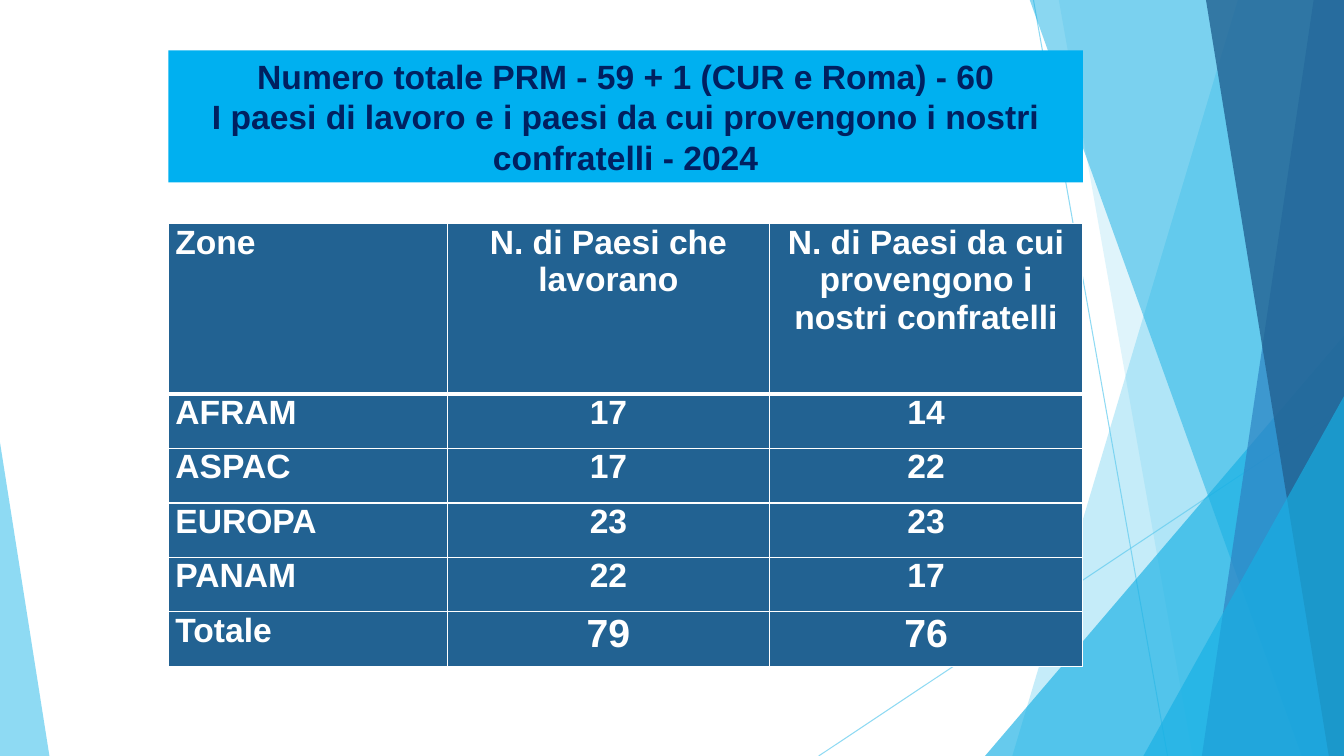
from lxml import etree
from pptx import Presentation, util as u
from pptx.dml.color import RGBColor
from pptx.enum import shapes, text
from pptx.oxml.ns import qn

PX = 9144  # 100 px to the inch
WIDE, HIGH = 1333, 750
SKY, CYAN, BLUE, NAVY = "5FCBEF", "17B0E4", "2E83C3", "226292"
WHITE = "FFFFFF"
MID, LEFT = text.PP_ALIGN.CENTER, text.PP_ALIGN.LEFT


def emu(*px):
    return [u.Emu(round(n * PX)) for n in px]


def rgb(code):
    return RGBColor.from_string(code)


class Deck:
    def __init__(self):
        self.prs = Presentation()
        self.prs.slide_width, self.prs.slide_height = emu(WIDE, HIGH)
        self.slide = self.prs.slides.add_slide(self.prs.slide_layouts[6])
        self.items = self.slide.shapes
        self.font = "Arial"

    def fade(self, fill, alpha):
        """Set the opacity of a solid fill's colour, in percent."""
        color = fill.find(".//" + qn("a:srgbClr"))
        etree.SubElement(color, qn("a:alpha"), val=str(alpha * 1000))

    def paint(self, shape, color, alpha=100):
        shape.shadow.inherit = False
        shape.fill.solid()
        shape.fill.fore_color.rgb = rgb(color)
        shape.line.fill.background()
        if alpha < 100:
            self.fade(shape._element.spPr.find(qn("a:solidFill")), alpha)
        return shape

    def line(self, start, end, color, alpha):
        line = self.items.add_connector(
            shapes.MSO_CONNECTOR.STRAIGHT, *emu(*start, *end))
        line.line.color.rgb = rgb(color)
        line.line.width = u.Pt(0.75)
        props = line._element.spPr
        self.fade(props.find(qn("a:ln")), alpha)
        etree.SubElement(props, qn("a:effectLst"))

    def band(self, top, foot, color, alpha):
        """Fill from a slanted left edge to the right side of the slide."""
        pen = self.items.build_freeform(top, -1, scale=PX)
        pen.add_line_segments([(WIDE, -1), (WIDE, HIGH), (foot, HIGH)])
        self.paint(pen.convert_to_shape(), color, alpha)

    def wedge(self, box, tip, color, alpha):
        """Triangle with its tip at a share of its width."""
        shape = self.items.add_shape(
            shapes.MSO_SHAPE.ISOSCELES_TRIANGLE, *emu(*box))
        shape.adjustments[0] = tip
        self.paint(shape, color, alpha)

    def label(self, para, words, color, size, align):
        para.text = words
        para.alignment = align
        for run in para.runs:
            run.font.name = self.font
            run.font.size = u.Pt(size)
            run.font.bold = True
            run.font.color.rgb = rgb(color)

    def title(self, box, lines, fill, color):
        shape = self.items.add_shape(shapes.MSO_SHAPE.RECTANGLE, *emu(*box))
        frame = self.paint(shape, fill).text_frame
        frame.word_wrap = True
        frame.vertical_anchor = text.MSO_ANCHOR.MIDDLE
        frame.text = "\n".join(lines)
        for para, words in zip(frame.paragraphs, lines):
            self.label(para, words, color, 24, MID)

    def edge(self, side, width):
        ln = etree.Element(qn("a:" + side), w=str(u.Pt(width)))
        fill = etree.SubElement(ln, qn("a:solidFill"))
        etree.SubElement(fill, qn("a:srgbClr"), val=WHITE)
        return ln

    def cell(self, cell, words, size, align, top, foot):
        cell.margin_left = cell.margin_right = emu(7)[0]
        cell.margin_top = cell.margin_bottom = 0
        para = cell.text_frame.paragraphs[0]
        self.label(para, words, WHITE, size, align)
        para.space_after = u.Pt(10)
        cell.fill.solid()
        cell.fill.fore_color.rgb = rgb(NAVY)
        props = cell._tc.get_or_add_tcPr()
        sides = {"lnL": 1, "lnR": 1, "lnT": top, "lnB": foot}
        for spot, (side, width) in enumerate(sides.items()):
            props.insert(spot, self.edge(side, width))

    def table(self, spot, cols, rows, data):
        grid = self.items.add_table(
            len(rows), len(cols), *emu(*spot, sum(cols), sum(rows))).table
        for col, wide in zip(grid.columns, emu(*cols)):
            col.width = wide
        for row, high in zip(grid.rows, emu(*rows)):
            row.height = high
        last = len(rows) - 1
        for r, line in enumerate(data):
            for c, words in enumerate(line):
                size = 28 if r == last and c else 24
                align = MID if c else LEFT if r else text.PP_ALIGN.JUSTIFY
                self.cell(grid.cell(r, c), words, size, align,
                          3 if r == 1 else 1, 1 if r else 3)


def main():
    deck = Deck()
    deck.line((1025, 0), (1158, HIGH), SKY, 70)
    deck.line((WIDE, 403), (812, HIGH), SKY, 70)
    deck.band(1228, 1004, SKY, 36)
    deck.band(1050, 1183, SKY, 20)
    deck.wedge((977, 333, 356, 417), 1, CYAN, 66)
    deck.band(1021, 1291, CYAN, 50)
    deck.band(1303, 1192, BLUE, 70)
    deck.band(1196, 1318, NAVY, 80)
    deck.wedge((1134, 393, 199, 357), 1, CYAN, 66)
    deck.wedge((0, 439, 49, 311), 0, SKY, 70)
    deck.table((167, 222), (277, 319, 311), [169] + [54] * 5, [
        ("Zone", "N. di Paesi che lavorano",
         "N. di Paesi da cui provengono i nostri confratelli"),
        ("AFRAM", "17", "14"),
        ("ASPAC", "17", "22"),
        ("EUROPA", "23", "23"),
        ("PANAM", "22", "17"),
        ("Totale", "79", "76"),
    ])
    deck.title((167, 50, 907, 131), [
        "Numero totale PRM - 59 + 1 (CUR e Roma) - 60",
        "I paesi di lavoro e i paesi da cui provengono i nostri"
        " confratelli - 2024",
    ], "00B0F0", "002060")
    deck.prs.save("out.pptx")


if __name__ == "__main__":
    main()
